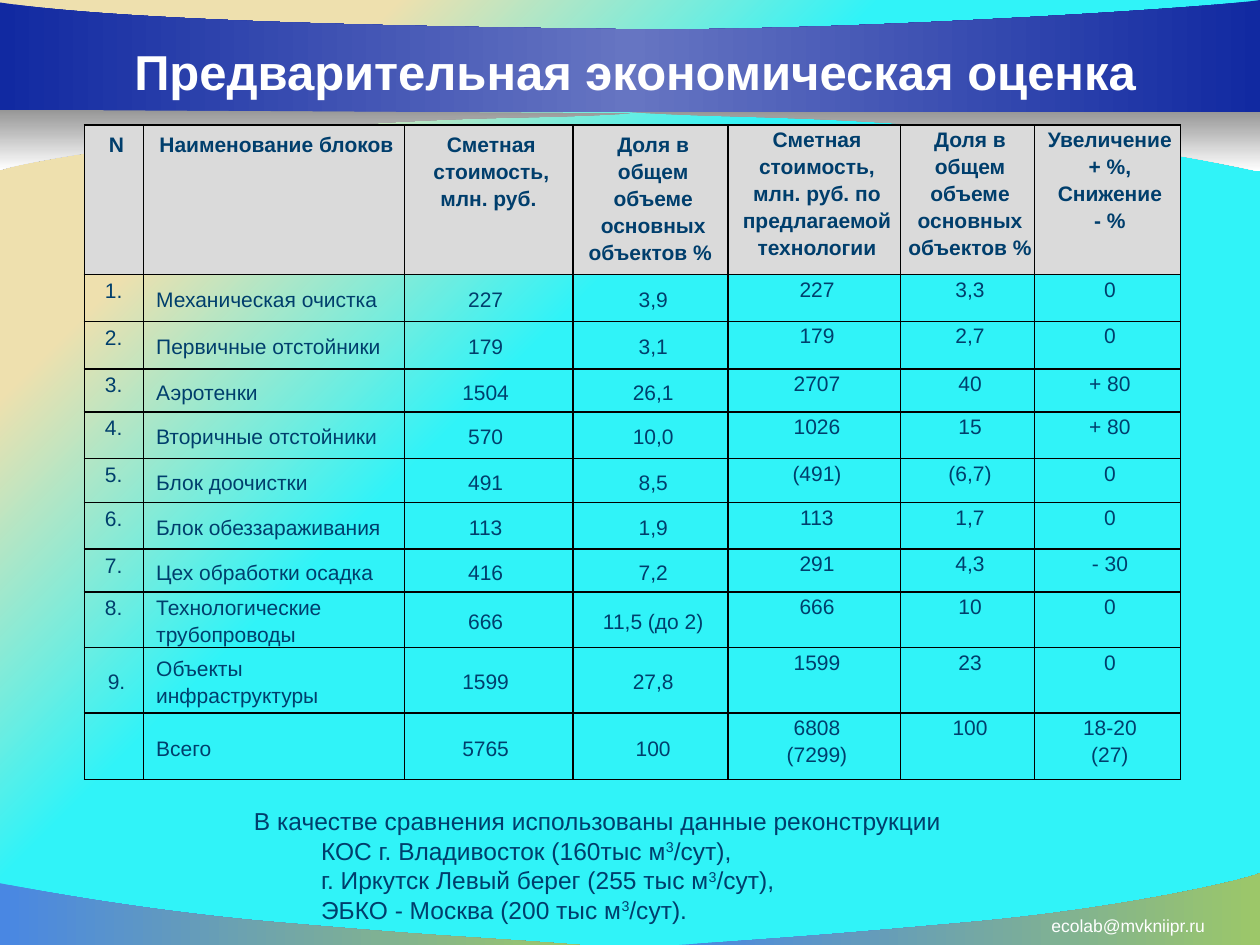
from pptx import Presentation
from pptx.dml.color import RGBColor
from pptx.enum.text import MSO_ANCHOR, PP_ALIGN
from pptx.oxml import parse_xml
from pptx.oxml.ns import qn
from pptx.util import Inches, Pt

FONT = "Arial"
WHITE = RGBColor(0xFF, 0xFF, 0xFF)
BLACK = RGBColor(0x00, 0x00, 0x00)
NAVY = RGBColor(0x00, 0x3E, 0x6C)
HEADER_GRAY = RGBColor(0xDA, 0xDA, 0xDA)
SHADE_GRAY = RGBColor(0x96, 0x96, 0x96)
RIBBON_BLUE = RGBColor(0x11, 0x29, 0xA1)
RIBBON_LIGHT = RGBColor(0x66, 0x75, 0xC2)
WAVE_BLUE = RGBColor(0x49, 0x87, 0xE3)
WAVE_GREEN = RGBColor(0x9C, 0xC7, 0x69)
CYAN = RGBColor(0x30, 0xF3, 0xF8)
SAND = RGBColor(0xEE, 0xE0, 0xAE)
DRAWING_NS = "http://schemas.openxmlformats.org/drawingml/2006/main"

WAVE = [(0, WAVE_BLUE), (100, WAVE_GREEN)]
SHADE = [(0, SHADE_GRAY), (100, WHITE)]
RIBBON = [(0, RIBBON_BLUE), (50, RIBBON_LIGHT), (100, RIBBON_BLUE)]

# Stops, angle, start point, then line ends (2 numbers) and Bezier curves (6 numbers)
DECORATIONS = [
    (WAVE, 0, (4.6, 7.5), [(3.84, 7.44, 3.58, 7.44, 2.32, 7.33),
                           (1.06, 7.23, 0.01, 7.01, 0, 7.01), (0, 7.5)]),
    (WAVE, 0, (5.39, 7.5), [(6.14, 7.45, 6.46, 7.43, 7.69, 7.32),
                            (8.92, 7.21, 9.9, 6.98, 10, 6.93), (10, 7.5)]),
    (SHADE, 90, (5, 0.89), [(5.84, 0.94, 6.2, 0.91, 7.58, 1.01),
                            (8.97, 1.12, 9.98, 1.36, 10, 1.36), (10, 0.88)]),
    (RIBBON, 0, (0, 0.89), [(10, 0.89), (10, 0), (9.64, 0.06, 6.53, 0.26, 4.87, 0.23),
                            (3.21, 0.21, 1.01, 0.17, 0, 0.02)]),
    (SHADE, 90, (5, 0.9), [(4.16, 0.95, 3.88, 0.91, 2.49, 1.01),
                           (1.1, 1.12, 0.11, 1.3, 0, 1.35), (0, 0.87)]),
]

COLUMN_WIDTHS = [0.47, 2.07, 1.34, 1.23, 1.37, 1.06, 1.16]
ROW_HEIGHTS = [1.19, 0.37, 0.38, 0.34, 0.37, 0.35, 0.37, 0.34, 0.44, 0.52, 0.53]
ROWS = [
    ["N", "Наименование блоков ", "Сметная стоимость, млн. руб. ",
     "Доля в общем объеме основных объектов % ",
     "Сметная стоимость, млн. руб. по предлагаемой технологии",
     "Доля в общем объеме основных объектов %", "Увеличение + %,\nСнижение\n- %"],
    ["1. ", "Механическая очистка", "227", "3,9", "227", "3,3", "0"],
    ["2. ", "Первичные отстойники", "179", "3,1", "179", "2,7", "0"],
    ["3. ", "Аэротенки", "1504", "26,1", "2707", "40", "+ 80"],
    ["4. ", "Вторичные отстойники", "570", "10,0", "1026", "15", "+ 80"],
    ["5. ", "Блок доочистки", "491", "8,5", "(491)", "(6,7)", "0"],
    ["6. ", "Блок обеззараживания", "113", "1,9", "113", "1,7", "0"],
    ["7. ", "Цех обработки осадка", "416", "7,2", "291", "4,3", "- 30"],
    ["8. ", "Технологические трубопроводы", "666", "11,5 (до 2)", "666", "10", "0"],
    ["9.", "Объекты инфраструктуры", "1599", "27,8", "1599", "23", "0"],
    ["", "Всего", "5765", "100", "6808\n(7299)", "100", "18-20\n(27)"],
]
# Left, top, right and bottom cell margins
HEADER_MARGINS = (0.08, 0.04, 0.08, 0.04)
NO_MARGINS = (0, 0, 0, 0)
BODY_MARGINS = [(0.01, 0.01, 0.01, 0), (0.1, 0.01, 0.01, 0), (0.01, 0.01, 0.1, 0),
                (0.01, 0.01, 0.01, 0)] + [NO_MARGINS] * 3

NOTE_INTRO = "В качестве сравнения использованы данные реконструкции "
NOTE_PLANTS = [("КОС г. Владивосток (160тыс м", "/сут),"),
               ("г. Иркутск Левый берег (255 тыс м", "/сут),"),
               ("ЭБКО - Москва (200 тыс м", "/сут).")]


def set_gradient(fill, owner, stops, direction):
    fill.gradient()
    gradient = next(owner.iter(qn("a:gradFill")))
    marks = "".join(f'<a:gs pos="{place * 1000}"><a:srgbClr val="{color}"/></a:gs>'
                    for place, color in stops)
    fresh = parse_xml(f'<a:gradFill xmlns:a="{DRAWING_NS}" rotWithShape="1">'
                      f'<a:gsLst>{marks}</a:gsLst>{direction}</a:gradFill>')
    gradient.getparent().replace(gradient, fresh)


def style(para, size, color=NAVY, bold=False, align=PP_ALIGN.LEFT):
    para.alignment = align
    para.font.name, para.font.size, para.font.bold = FONT, Pt(size), bold
    para.font.color.rgb = color


def add_curved_shape(page, start, segments):
    ends = [(Inches(segment[-2]), Inches(segment[-1])) for segment in segments]
    builder = page.shapes.build_freeform(Inches(start[0]), Inches(start[1]), scale=1.0)
    builder.add_line_segments(ends, close=True)
    shape = builder.convert_to_shape()
    # Bend the straight edges that have control points
    for edge, segment in zip(list(shape.element.iter(qn("a:lnTo"))), segments):
        if len(segment) == 6:
            knots = "".join(
                f'<a:pt x="{Inches(x) - shape.left}" y="{Inches(y) - shape.top}"/>'
                for x, y in zip(segment[::2], segment[1::2]))
            curve = parse_xml(
                f'<a:cubicBezTo xmlns:a="{DRAWING_NS}">{knots}</a:cubicBezTo>')
            edge.getparent().replace(edge, curve)
    return shape


def add_backdrop(page):
    set_gradient(page.background.fill, page.element, [(60, CYAN), (82, SAND)],
                 '<a:path path="circle"><a:fillToRect l="100000" t="100000"/></a:path>')
    for stops, angle, start, segments in DECORATIONS:
        shape = add_curved_shape(page, start, segments)
        shape.shadow.inherit = False
        shape.line.fill.background()
        set_gradient(shape.fill, shape.element, stops,
                     f'<a:lin ang="{angle * 60000}" scaled="0"/>')


def add_title(page, left, top, width, height):
    title = page.shapes.title
    page.shapes.element.append(title.element)  # in front of the ribbon
    title.left, title.top, title.width, title.height = left, top, width, height
    title.text_frame.text = "Предварительная экономическая оценка"
    title.text_frame.vertical_anchor = MSO_ANCHOR.MIDDLE
    style(title.text_frame.paragraphs[0], 28, WHITE, True, PP_ALIGN.CENTER)


def add_text_box(page, left, top, width, height):
    frame = page.shapes.add_textbox(left, top, width, height).text_frame
    frame.word_wrap = True
    return frame


def add_contact(page, left, top, width, height):
    frame = add_text_box(page, left, top, width, height)
    frame.text = "ecolab@mvkniipr.ru"
    style(frame.paragraphs[0], 10, WHITE, align=PP_ALIGN.RIGHT)


def set_borders(cell):
    properties = cell._tc.get_or_add_tcPr()
    for place, side in enumerate(("lnL", "lnR", "lnT", "lnB")):
        properties.insert(place, parse_xml(
            f'<a:{side} xmlns:a="{DRAWING_NS}" w="{Pt(1)}"><a:solidFill>'
            f'<a:srgbClr val="{BLACK}"/></a:solidFill></a:{side}>'))


def fill_cell(cell, text, row, column):
    header = row == 0
    if header:
        margins = HEADER_MARGINS if column < 4 else NO_MARGINS
        cell.fill.solid()
        cell.fill.fore_color.rgb = HEADER_GRAY
    else:
        margins = BODY_MARGINS[column]
        cell.fill.background()
    (cell.margin_left, cell.margin_top,
     cell.margin_right, cell.margin_bottom) = map(Inches, margins)
    centered = not header and (column in (1, 2, 3) or text == "9.")
    cell.vertical_anchor = MSO_ANCHOR.MIDDLE if centered else MSO_ANCHOR.TOP
    set_borders(cell)
    if not text:
        return
    cell.text = text
    is_name = column == 1 and not header
    for para in cell.text_frame.paragraphs:
        para.line_spacing = 1.15
        if not is_name:
            para._p.get_or_add_pPr().set("marL", str(Inches(0.04)))
        style(para, 12, bold=header, align=PP_ALIGN.LEFT if is_name else PP_ALIGN.CENTER)


def add_cost_table(page, left, top, width, height):
    table = page.shapes.add_table(len(ROWS), len(COLUMN_WIDTHS), left, top, width, height).table
    table.horz_banding = False
    for column, size in zip(table.columns, COLUMN_WIDTHS):
        column.width = Inches(size)
    for row, size in zip(table.rows, ROW_HEIGHTS):
        row.height = Inches(size)
    for row, texts in enumerate(ROWS):
        for column, text in enumerate(texts):
            fill_cell(table.cell(row, column), text, row, column)


def add_note(page, left, top, width, height):
    frame = add_text_box(page, left, top, width, height)
    frame.text = NOTE_INTRO
    style(frame.paragraphs[0], 14, align=PP_ALIGN.CENTER)
    for before, after in NOTE_PLANTS:
        para = frame.add_paragraph()
        para._p.get_or_add_pPr().set("indent", str(Inches(2.17)))
        for text in (before, "3", after):
            span = para.add_run()
            span.text = text
            if text == "3":
                span.font._element.set("baseline", "30000")
        style(para, 14)


def main():
    deck = Presentation()
    deck.slide_width, deck.slide_height = Inches(10), Inches(7.5)
    page = deck.slides.add_slide(deck.slide_layouts[5])
    add_backdrop(page)
    add_contact(page, Inches(7.58), Inches(7.21), Inches(2.08), Inches(0.25))
    add_title(page, Inches(0.75), Inches(0.25), Inches(8.58), Inches(0.62))
    add_cost_table(page, Inches(0.67), Inches(0.99), Inches(8.7), Inches(5.27))
    add_note(page, Inches(0.28), Inches(6.35), Inches(8.98), Inches(1.04))
    deck.save("out.pptx")


if __name__ == "__main__":
    main()
